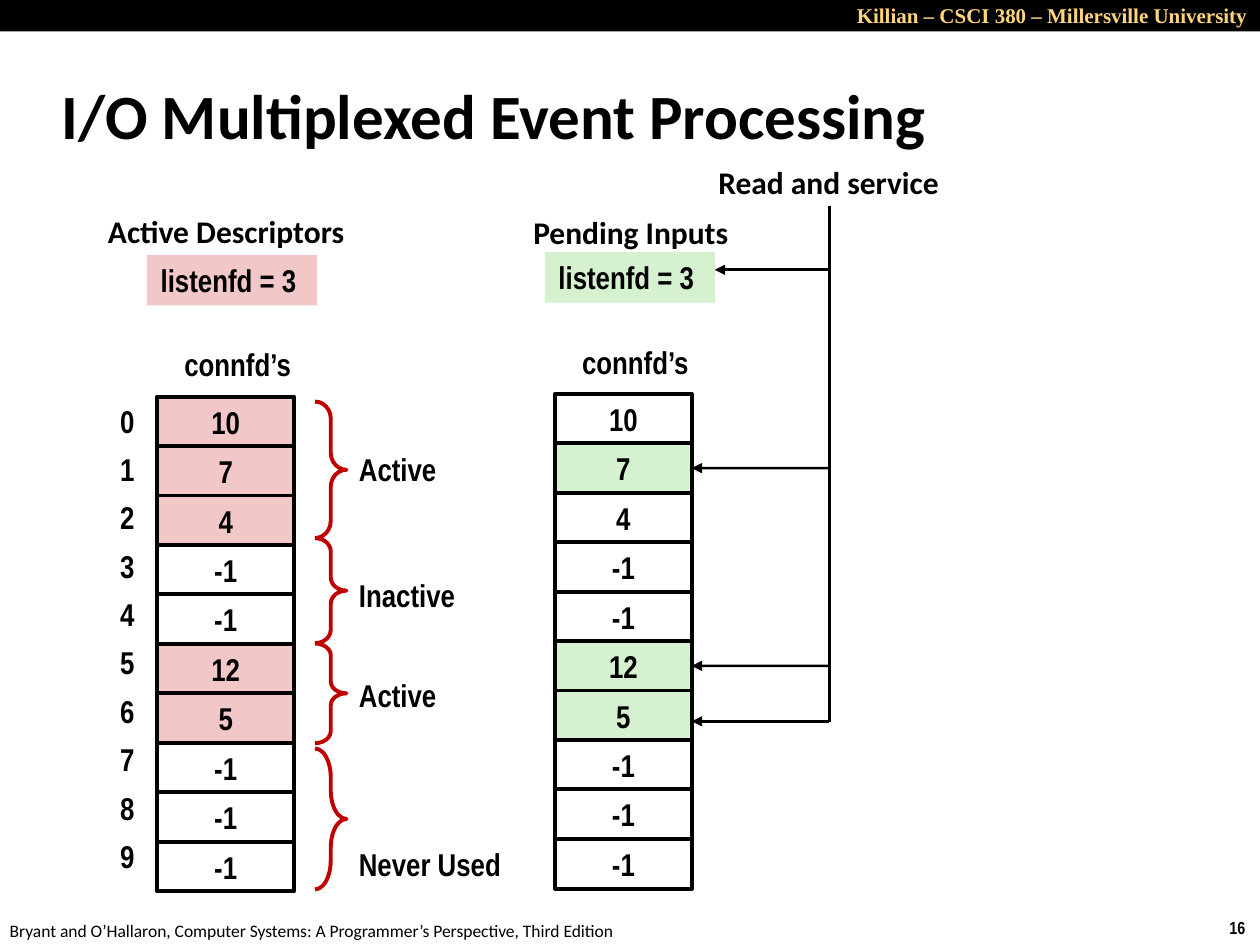
from dataclasses import dataclass
from typing import NamedTuple, Optional

from lxml import etree
from pptx import Presentation
from pptx.dml.color import RGBColor
from pptx.enum.shapes import MSO_CONNECTOR, MSO_SHAPE
from pptx.enum.text import MSO_ANCHOR, PP_ALIGN
from pptx.oxml.ns import qn
from pptx.util import Pt

RECT, BRACE = MSO_SHAPE.RECTANGLE, MSO_SHAPE.RIGHT_BRACE
STRAIGHT = MSO_CONNECTOR.STRAIGHT
LEFT, CENTER, RIGHT = PP_ALIGN.LEFT, PP_ALIGN.CENTER, PP_ALIGN.RIGHT
TOP, MIDDLE = MSO_ANCHOR.TOP, MSO_ANCHOR.MIDDLE
RIGHT_SIDE = 3


@dataclass(frozen=True)
class Theme:
    black: RGBColor = RGBColor.from_string("000000")
    white: RGBColor = RGBColor.from_string("FFFFFF")
    gold: RGBColor = RGBColor.from_string("FFD579")
    pink: RGBColor = RGBColor.from_string("F1C7C7")
    green: RGBColor = RGBColor.from_string("D5F1CF")
    red: RGBColor = RGBColor.from_string("C00000")
    heading: str = "Calibri"
    label: str = "Arial Narrow"
    header: str = "Times New Roman"
    title_size: int = 36
    body_size: int = 18
    header_size: int = 12
    footer_size: int = 10
    border: float = 2.25
    wire: float = 1.5


class Box(NamedTuple):
    x: float
    y: float
    w: float
    h: float


class Style(NamedTuple):
    font: str
    size: int
    color: RGBColor
    bold: bool = True


class Column(NamedTuple):
    x: float
    y: float
    fill: RGBColor
    marked: set[int]
    heading: str
    heading_box: Box
    listen_box: Box


class Group(NamedTuple):
    text: str
    y: float
    h: float
    curve: float
    text_y: float
    text_w: float


class Arrow(NamedTuple):
    x: float
    y: float
    row: Optional[int] = None


T = Theme()
LABEL = Style(T.label, T.body_size, T.black)
HEADING = Style(T.heading, T.body_size, T.black)
TITLE = Style(T.heading, T.title_size, T.black)
HEADER = Style(T.header, T.header_size, T.gold)
FOOTER = Style(T.heading, T.footer_size, T.black, False)
NUMBER = Style(T.label, T.footer_size, T.black)

CELL_W, CELL_H, PITCH = 78, 28.5, 28.26
INDEX_PITCH = 27.65
TRUNK_X, TRUNK_TOP, TRUNK_BOTTOM = 474, 118, 412.4

VALUES = ["10", "7", "4", "-1", "-1", "12", "5", "-1", "-1", "-1"]
ACTIVE = Column(90, 226.6, T.pink, {0, 1, 2, 5, 6}, "Active Descriptors",
                Box(54, 117.4, 150.5, 29), Box(84, 145.6, 97.2, 29))
PENDING = Column(317.25, 225, T.green, {1, 5, 6}, "Pending Inputs",
                 Box(282, 118.2, 157, 29), Box(311.3, 144, 97.2, 29))
GROUPS = [
    Group("Active", 229.5, 78, 0.542, 253.4, 59),
    Group("Inactive", 307.5, 60, 0.417, 325.4, 70.6),
    Group("Active", 367.7, 57, 0.375, 383, 59),
    Group("Never Used", 427.7, 80.6, 0.917, 479.3, 96.5),
]
ARROWS = [Arrow(408.5, 154.2), Arrow(395.25, 267.5, 1),
          Arrow(395.25, 380.5, 5), Arrow(395.25, 412.2)]


def write(s, text: str, style: Style, align=LEFT, anchor=TOP, wrap: bool = True) -> None:
    tf = s.text_frame
    tf.word_wrap = wrap
    tf.vertical_anchor = anchor
    p = tf.paragraphs[0]
    p.text = text
    p.alignment = align
    p.font.name = style.font
    p.font.size = Pt(style.size)
    p.font.bold = style.bold
    p.font.color.rgb = style.color


def add_text(slide, box: Box, text: str, style: Style, align=LEFT,
             anchor=TOP, wrap: bool = False) -> None:
    s = slide.shapes.add_textbox(*map(Pt, box))
    write(s, text, style, align, anchor, wrap)


def add_shape(slide, kind, box: Box, fill: Optional[RGBColor] = None,
              line: Optional[RGBColor] = None):
    s = slide.shapes.add_shape(kind, *map(Pt, box))
    s.shadow.inherit = False
    if fill is None:
        s.fill.background()
    else:
        s.fill.solid()
        s.fill.fore_color.rgb = fill
    if line is None:
        s.line.fill.background()
    else:
        s.line.color.rgb = line
        s.line.width = Pt(T.border)
    return s


def add_column(slide, col: Column) -> list:
    add_text(slide, col.heading_box, col.heading, HEADING, CENTER)
    s = add_shape(slide, RECT, col.listen_box, col.fill)
    write(s, "listenfd = 3 ", LABEL, CENTER, wrap=False)
    add_text(slide, Box(col.x + 7.7, col.y - 32.8, 76.3, 29), "connfd’s", LABEL, CENTER)
    cells = []
    for i, value in enumerate(VALUES):
        fill = col.fill if i in col.marked else T.white
        box = Box(col.x, col.y + i * PITCH, CELL_W, CELL_H)
        s = add_shape(slide, RECT, box, fill, T.black)
        write(s, value, LABEL, CENTER, MIDDLE)
        cells.append(s)
    return cells


def add_group(slide, group: Group) -> None:
    s = add_shape(slide, BRACE, Box(180, group.y, 18, group.h), line=T.red)
    s.adjustments[0] = group.curve
    add_text(slide, Box(198, group.text_y, group.text_w, 29), group.text, LABEL)


def add_wire(slide, x1: float, y1: float, x2: float, y2: float, arrow: bool = False):
    c = slide.shapes.add_connector(STRAIGHT, Pt(x1), Pt(y1), Pt(x2), Pt(y2))
    c.line.color.rgb = T.black
    c.line.width = Pt(T.wire)
    if arrow:
        etree.SubElement(c.line._get_or_add_ln(), qn("a:tailEnd"), type="triangle")
    etree.SubElement(c._element.spPr, qn("a:effectLst"))
    return c


def main() -> None:
    prs = Presentation()
    prs.slide_width, prs.slide_height = Pt(720), Pt(540)
    slide = prs.slides.add_slide(prs.slide_layouts[6])

    add_text(slide, Box(695.5, 520.6, 24.5, 19.4), "16", NUMBER)
    add_text(slide, Box(-1.5, 522, 366, 19.4),
             "Bryant and O’Hallaron, Computer Systems: A Programmer’s Perspective, Third Edition",
             FOOTER)
    add_shape(slide, RECT, Box(0, 0, 720, 18), T.black)
    add_text(slide, Box(324, -2, 396, 21.6),
             "Killian – CSCI 380 – Millersville University", HEADER, RIGHT, wrap=True)
    add_text(slide, Box(28, 35.5, 597.6, 60), "I/O Multiplexed Event Processing",
             TITLE, anchor=MIDDLE, wrap=True)

    add_column(slide, ACTIVE)
    for i in range(len(VALUES)):
        add_text(slide, Box(6, 226 + i * INDEX_PITCH, CELL_W, CELL_H),
                 str(i), LABEL, RIGHT, MIDDLE, True)
    for group in GROUPS:
        add_group(slide, group)

    cells = add_column(slide, PENDING)
    for arrow in ARROWS:
        c = add_wire(slide, TRUNK_X, arrow.y, arrow.x, arrow.y, arrow=True)
        if arrow.row is not None:
            c.end_connect(cells[arrow.row], RIGHT_SIDE)
    add_wire(slide, TRUNK_X, TRUNK_BOTTOM, TRUNK_X, TRUNK_TOP)
    add_text(slide, Box(395, 89.5, 157, 29), "Read and service", HEADING, CENTER, wrap=True)

    prs.save("out.pptx")


if __name__ == "__main__":
    main()
